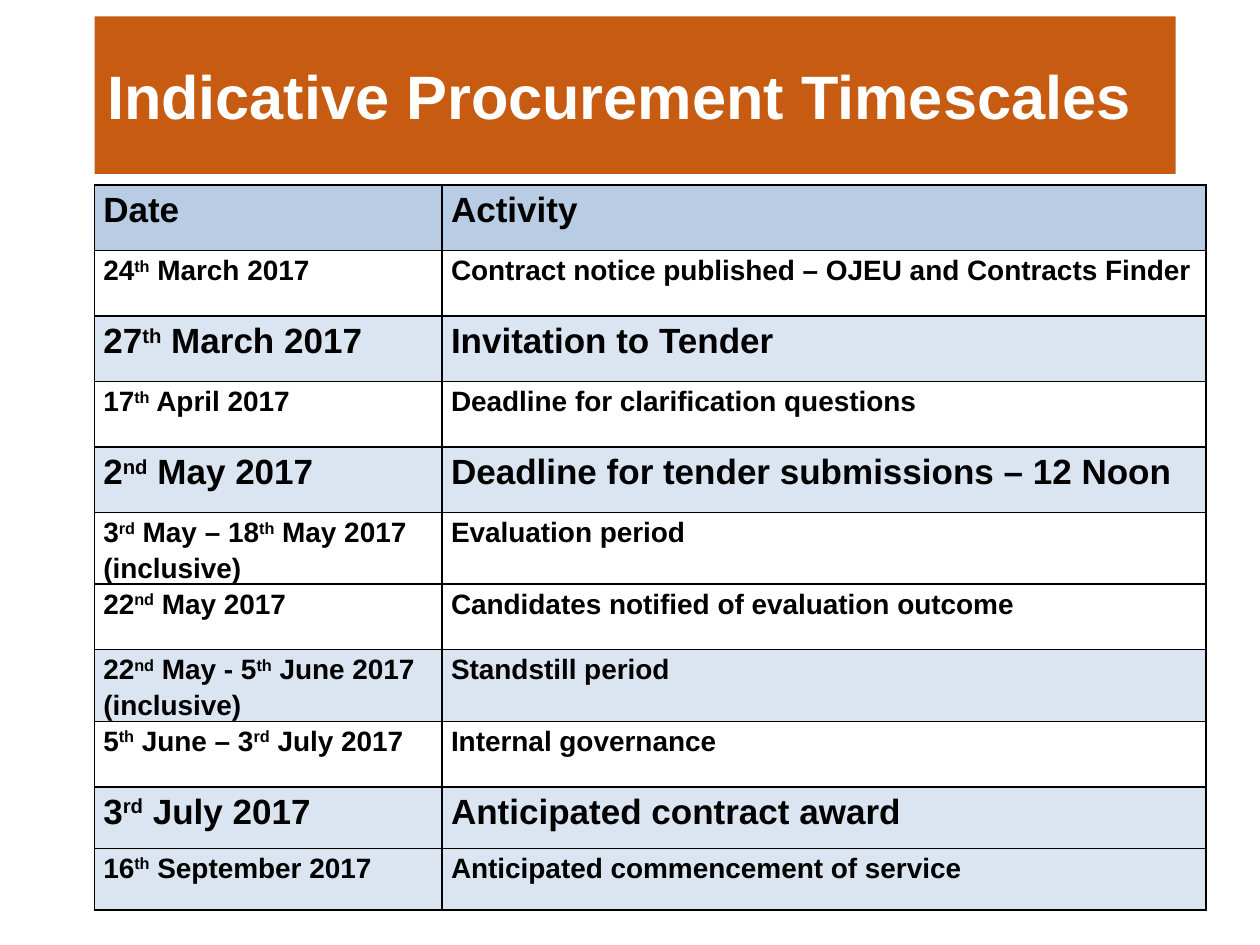
import pptx
import pptx.dml.color
import pptx.enum.text
import pptx.oxml
import pptx.oxml.ns
import pptx.util
from pptx.util import Inches

COLORS = {
    "banner": "C75B12",
    "header": "B8CCE4",
    "band": "DBE5F1",
    "plain": "FFFFFF",
    "text": "000000",
    "border": "000000",
}
FONT = "Arial"
LARGE, SMALL = 20, 16

# Date (ordinal suffixes between carets), activity, fill, text size
ROWS = [
    ("Date", "Activity", "header", LARGE),
    ("24^th^ March 2017", "Contract notice published – OJEU and Contracts Finder", "plain", SMALL),
    ("27^th^ March 2017", "Invitation to Tender", "band", LARGE),
    ("17^th^ April 2017", "Deadline for clarification questions", "plain", SMALL),
    ("2^nd^ May 2017", "Deadline for tender submissions – 12 Noon", "band", LARGE),
    ("3^rd^ May – 18^th^ May 2017 (inclusive)", "Evaluation period", "plain", SMALL),
    ("22^nd^ May 2017", "Candidates notified of evaluation outcome", "plain", SMALL),
    ("22^nd^ May - 5^th^ June 2017 (inclusive)", "Standstill period", "band", SMALL),
    ("5^th^ June – 3^rd^ July 2017", "Internal governance", "plain", SMALL),
    ("3^rd^ July 2017", "Anticipated contract award", "band", LARGE),
    ("16^th^ September 2017", "Anticipated commencement of service", "band", SMALL),
]
COLUMN_WIDTHS = [2.76, 6.06]
ROW_HEIGHTS = [0.52] * 9 + [0.49] * 2


def rgb(name):
    return pptx.dml.color.RGBColor.from_string(COLORS[name])


def add_run(paragraph, text, size, color, superscript=False):
    run = paragraph.add_run()
    run.text = text
    run.font.name = FONT
    run.font.size = pptx.util.Pt(size)
    run.font.bold = True
    run.font.color.rgb = rgb(color)
    if superscript:
        run._r.get_or_add_rPr().set("baseline", "30000")


def place_title(slide, left, top, width, height):
    title = slide.shapes.title
    title.left, title.top = Inches(left), Inches(top)
    title.width, title.height = Inches(width), Inches(height)
    title.fill.solid()
    title.fill.fore_color.rgb = rgb("banner")
    frame = title.text_frame
    frame.word_wrap = True
    frame.auto_size = pptx.enum.text.MSO_AUTO_SIZE.NONE
    frame.vertical_anchor = pptx.enum.text.MSO_ANCHOR.MIDDLE
    paragraph = frame.paragraphs[0]
    paragraph.alignment = pptx.enum.text.PP_ALIGN.LEFT
    add_run(paragraph, "Indicative Procurement Timescales", 35, "plain")


def add_borders(cell):
    """Draw a 1 pt line on all four sides, ahead of the cell's fill."""
    properties = cell._tc.get_or_add_tcPr()
    for index, side in enumerate(("lnL", "lnR", "lnT", "lnB")):
        line = pptx.oxml.parse_xml(
            f'<a:{side} {pptx.oxml.ns.nsdecls("a")} w="12700"><a:solidFill>'
            f'<a:srgbClr val="{COLORS["border"]}"/></a:solidFill></a:{side}>'
        )
        properties.insert(index, line)


def fill_cell(cell, text, fill, size):
    cell.margin_left = cell.margin_right = Inches(0.07)
    cell.margin_top = cell.margin_bottom = 0
    cell.fill.solid()
    cell.fill.fore_color.rgb = rgb(fill)
    add_borders(cell)
    paragraph = cell.text_frame.paragraphs[0]
    paragraph.line_spacing = 1.15
    paragraph.space_after = pptx.util.Pt(10)
    for index, part in enumerate(text.split("^")):
        add_run(paragraph, part, size, "text", superscript=index % 2 == 1)


def add_timetable(slide, left, top):
    table = slide.shapes.add_table(
        len(ROWS), len(COLUMN_WIDTHS), Inches(left), Inches(top),
        Inches(sum(COLUMN_WIDTHS)), Inches(sum(ROW_HEIGHTS)),
    ).table
    for column, width in zip(table.columns, COLUMN_WIDTHS):
        column.width = Inches(width)
    for row, height, (date, activity, fill, size) in zip(table.rows, ROW_HEIGHTS, ROWS):
        row.height = Inches(height)
        for cell, text in zip(row.cells, (date, activity)):
            fill_cell(cell, text, fill, size)


def main():
    presentation = pptx.Presentation()
    presentation.slide_width, presentation.slide_height = Inches(10), Inches(7.5)
    slide = presentation.slides.add_slide(presentation.slide_layouts[5])
    place_title(slide, 0.75, 0.13, 8.58, 1.25)
    add_timetable(slide, 0.75, 1.47)
    presentation.save("out.pptx")


if __name__ == "__main__":
    main()
